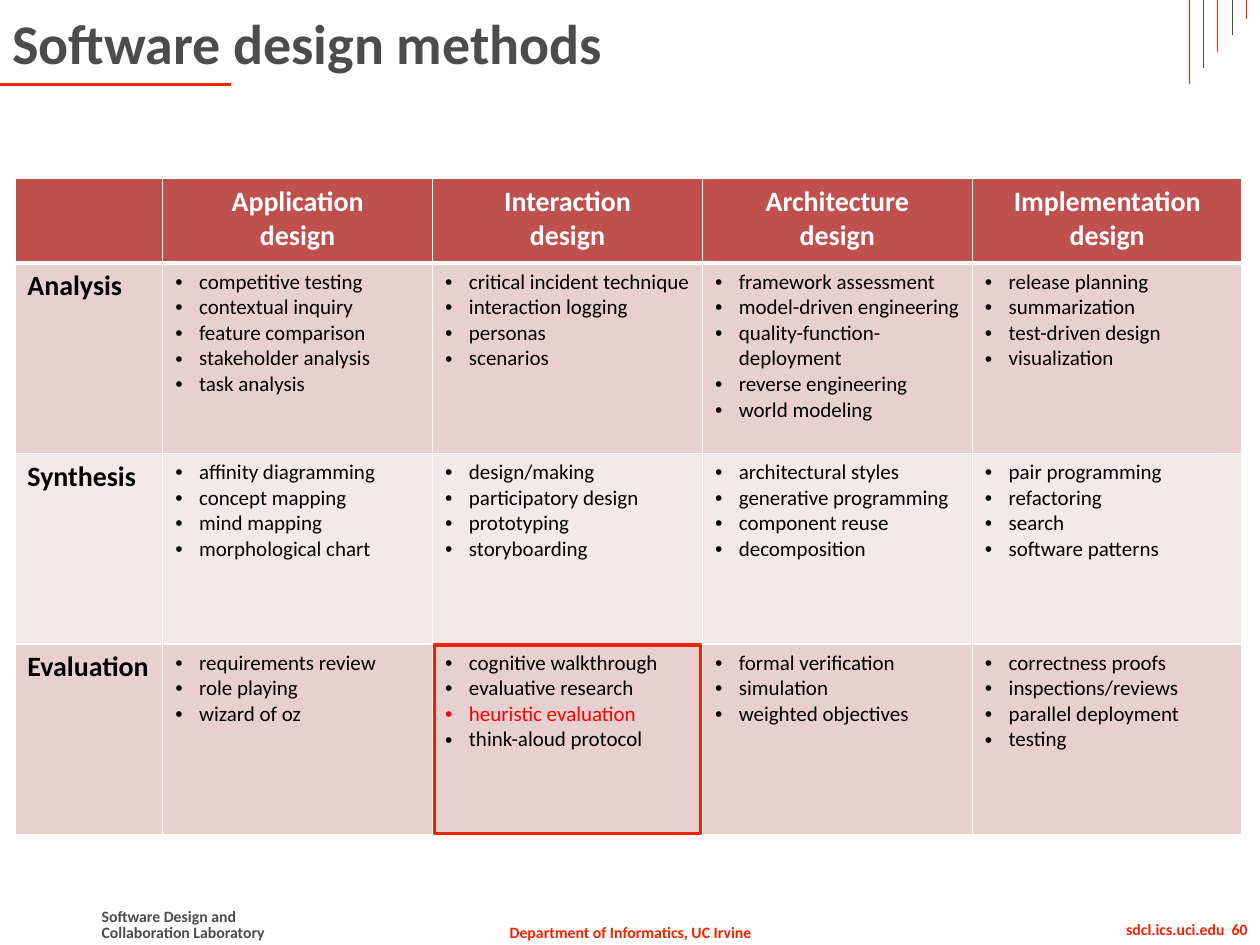
from dataclasses import dataclass

from lxml.etree import SubElement
from pptx import Presentation
from pptx.dml.color import RGBColor
from pptx.enum.shapes import MSO_CONNECTOR, MSO_SHAPE
from pptx.enum.text import MSO_ANCHOR, PP_ALIGN
from pptx.oxml.ns import qn
from pptx.util import Cm, Pt

COLORS = {
    "accent": "F32200",
    "gray": "4C4C4C",
    "header": "C0504D",
    "band_dark": "E8D0D0",
    "band_light": "F4E9E9",
    "white": "FFFFFF",
    "black": "000000",
    "red": "FF0000",
}
FONT = "Calibri"
INDENT = 0.48

# Table grid, in centimetres
TABLE_LEFT, TABLE_TOP = 0.3, 3.6
LABEL_WIDTH, METHOD_WIDTH = 2.98, 5.44
HEADER_HEIGHT, BODY_HEIGHT = 1.7, 3.84


@dataclass
class Label:
    text: str
    left: float
    top: float
    width: float
    height: float
    size: float = 9
    color: str = "accent"
    align: PP_ALIGN = PP_ALIGN.LEFT
    wrap: bool = False
    anchor: MSO_ANCHOR = MSO_ANCHOR.TOP


@dataclass
class Rule:
    start: tuple[float, float]
    end: tuple[float, float]
    color: str
    weight: float


@dataclass
class Activity:
    name: str
    fill: str
    methods: list[list[str]]


LABELS = [
    Label("Software design methods", 0, 0, 22.86, 1.7, 32, "gray", wrap=True, anchor=MSO_ANCHOR.MIDDLE),
    Label("Department of Informatics, UC Irvine", 9.98, 18.47, 5.46, 0.64, align=PP_ALIGN.CENTER),
    Label("Collaboration Laboratory", 1.8, 18.47, 3.89, 0.64, color="gray"),
    Label("Software Design and", 1.8, 18.16, 3.28, 0.64, color="gray"),
    Label("sdcl.ics.uci.edu  60", 19.91, 18.42, 5.49, 0.64, align=PP_ALIGN.RIGHT, wrap=True),
]

# Title underline, then the shrinking strokes in the top right corner
RULES = [Rule((0, 1.7), (4.65, 1.7), "accent", 1.5)] + [
    Rule((23.98 + 0.285 * i, 1.7 - 0.33 * i), (23.98 + 0.285 * i, 0), ("accent", "gray")[i % 2], 0.5)
    for i in range(5)
]

HEADERS = ["Application", "Interaction", "Architecture", "Implementation"]
HIGHLIGHT = "heuristic evaluation"
ACTIVITIES = [
    Activity("Analysis", "band_dark", [
        ["competitive testing", "contextual inquiry", "feature comparison",
         "stakeholder analysis", "task analysis"],
        ["critical incident technique", "interaction logging", "personas", "scenarios"],
        ["framework assessment", "model-driven engineering", "quality-function-deployment",
         "reverse engineering", "world modeling"],
        ["release planning", "summarization", "test-driven design", "visualization"],
    ]),
    Activity("Synthesis", "band_light", [
        ["affinity diagramming", "concept mapping", "mind mapping", "morphological chart"],
        ["design/making", "participatory design", "prototyping", "storyboarding"],
        ["architectural styles", "generative programming", "component reuse", "decomposition"],
        ["pair programming", "refactoring", "search", "software patterns"],
    ]),
    Activity("Evaluation", "band_dark", [
        ["requirements review", "role playing", "wizard of oz"],
        ["cognitive walkthrough", "evaluative research", HIGHLIGHT, "think-aloud protocol"],
        ["formal verification", "simulation", "weighted objectives"],
        ["correctness proofs", "inspections/reviews", "parallel deployment", "testing"],
    ]),
]


def rgb(name: str) -> RGBColor:
    return RGBColor.from_string(COLORS[name])


def write(para, text: str, *, size: float, color: str, bold: bool = True,
          align: PP_ALIGN = PP_ALIGN.LEFT, bullet: bool = False) -> None:
    """Fill one paragraph; a newline in the text becomes a line break."""
    para.alignment = align
    if bullet:
        properties = para._p.get_or_add_pPr()
        properties.set("marL", str(Cm(INDENT)))
        properties.set("indent", str(-Cm(INDENT)))
        SubElement(properties, qn("a:buFont"), typeface="Arial")
        SubElement(properties, qn("a:buChar"), char="•")
    for index, line in enumerate(text.split("\n")):
        if index:
            para.add_line_break()
        span = para.add_run()
        span.text = line
        span.font.name, span.font.size, span.font.bold = FONT, Pt(size), bold
        span.font.color.rgb = rgb(color)


def add_label(page, label: Label) -> None:
    box = page.shapes.add_textbox(Cm(label.left), Cm(label.top), Cm(label.width), Cm(label.height))
    frame = box.text_frame
    frame.word_wrap = label.wrap
    frame.vertical_anchor = label.anchor
    write(frame.paragraphs[0], label.text, size=label.size, color=label.color, align=label.align)


def add_rule(page, rule: Rule) -> None:
    points = [Cm(value) for value in rule.start + rule.end]
    line = page.shapes.add_connector(MSO_CONNECTOR.STRAIGHT, *points)
    line.line.color.rgb = rgb(rule.color)
    line.line.width = Pt(rule.weight)
    SubElement(line._element.spPr, qn("a:effectLst"))


def style_cell(cell, fill: str, top: float = 1, bottom: float = 1) -> None:
    """Draw white borders (widths in points) and fill the cell."""
    properties = cell._tc.get_or_add_tcPr()
    for side, width in {"L": 1, "R": 1, "T": top, "B": bottom}.items():
        border = SubElement(properties, qn(f"a:ln{side}"), w=str(Pt(width)))
        solid = SubElement(border, qn("a:solidFill"))
        SubElement(solid, qn("a:srgbClr"), val=COLORS["white"])
    cell.fill.solid()
    cell.fill.fore_color.rgb = rgb(fill)


def add_methods_table(page) -> None:
    widths = [LABEL_WIDTH] + [METHOD_WIDTH] * len(HEADERS)
    heights = [HEADER_HEIGHT] + [BODY_HEIGHT] * len(ACTIVITIES)
    table = page.shapes.add_table(len(heights), len(widths), Cm(TABLE_LEFT), Cm(TABLE_TOP),
                                  Cm(sum(widths)), Cm(sum(heights))).table
    for column, width in zip(table.columns, widths):
        column.width = Cm(width)
    for row, height in zip(table.rows, heights):
        row.height = Cm(height)

    # Header row
    for column, header in enumerate([""] + HEADERS):
        cell = table.cell(0, column)
        style_cell(cell, "header", bottom=3)
        if header:
            write(cell.text_frame.paragraphs[0], f"{header}\ndesign", size=16, color="white",
                  align=PP_ALIGN.CENTER)

    # Activity rows
    for row, activity in enumerate(ACTIVITIES, 1):
        for column in range(len(widths)):
            style_cell(table.cell(row, column), activity.fill, top=3 if row == 1 else 1)
        write(table.cell(row, 0).text_frame.paragraphs[0], activity.name, size=16, color="black")
        for column, methods in enumerate(activity.methods, 1):
            frame = table.cell(row, column).text_frame
            for index, method in enumerate(methods):
                para = frame.add_paragraph() if index else frame.paragraphs[0]
                write(para, method, size=12, bold=False, bullet=True,
                      color="red" if method == HIGHLIGHT else "black")


def add_highlight(page, row: int, column: int) -> None:
    """Outline one body cell, counted from zero."""
    left = TABLE_LEFT + LABEL_WIDTH + column * METHOD_WIDTH + 0.04
    top = TABLE_TOP + HEADER_HEIGHT + row * BODY_HEIGHT + 0.02
    frame = page.shapes.add_shape(MSO_SHAPE.RECTANGLE, Cm(left), Cm(top),
                                  Cm(METHOD_WIDTH - 0.08), Cm(BODY_HEIGHT - 0.04))
    frame.shadow.inherit = False
    frame.fill.background()
    frame.line.color.rgb = rgb("accent")
    frame.line.width = Pt(2)


def main() -> None:
    deck = Presentation()
    deck.slide_width, deck.slide_height = Cm(25.4), Cm(19.05)
    page = deck.slides.add_slide(deck.slide_layouts[6])
    for rule in RULES:
        add_rule(page, rule)
    add_methods_table(page)
    for label in LABELS:
        add_label(page, label)
    add_highlight(page, row=2, column=1)
    deck.save("out.pptx")


if __name__ == "__main__":
    main()
